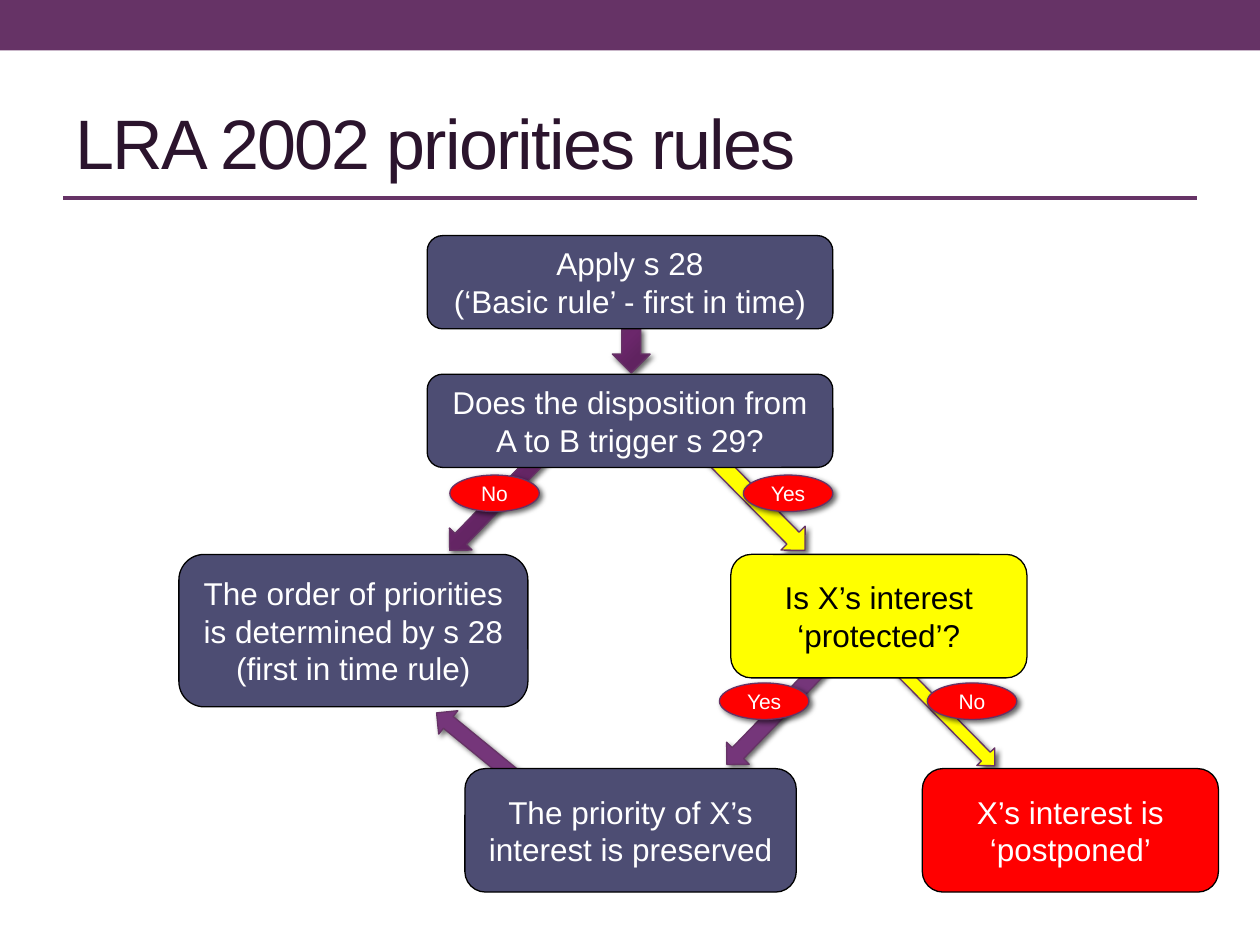
from lxml import etree
from pptx import Presentation
from pptx.dml.color import RGBColor
from pptx.enum import shapes, text
from pptx.oxml import ns
from pptx.util import Inches, Pt

COLORS = {
    "plum": "663366", "violet": "75367A", "deep": "622162", "slate": "4D4D73",
    "yellow": "FFFF00", "red": "FF0000", "black": "000000", "white": "FFFFFF",
    "title": "2B142D",
}
PLUM_STOPS = [(0, "622162"), (34, "602360"), (70, "6B276B"), (100, "663366")]
FONT = "Arial"
SHAPE = shapes.MSO_SHAPE


def rgb(name):
    return RGBColor.from_string(COLORS[name])


def sub(parent, tag, **attrs):
    return etree.SubElement(parent, ns.qn(tag), attrs)


def add_shape(s, kind, box, fill, line=None):
    sp = s.shapes.add_shape(kind, *map(Inches, box))
    sp.shadow.inherit = False
    sp.fill.solid()
    sp.fill.fore_color.rgb = rgb(fill)
    if line:
        sp.line.color.rgb = rgb(line)
        sp.line.width = Pt(0.75)
    else:
        sp.line.fill.background()
    return sp


def add_shadow(sp):
    effects = sp._element.spPr.find(ns.qn("a:effectLst"))
    shadow = sub(effects, "a:outerShdw", blurRad=str(Pt(3)), dist=str(Pt(2)),
                 dir="2700000", algn="tl", rotWithShape="0")
    color = sub(shadow, "a:srgbClr", val=COLORS["black"])
    sub(color, "a:alpha", val="60000")


def add_plum_gradient(sp):
    solid = sp._element.spPr.find(ns.qn("a:solidFill"))
    grad = etree.Element(ns.qn("a:gradFill"), rotWithShape="1")
    stops = sub(grad, "a:gsLst")
    for position, color in PLUM_STOPS:
        stop = sub(stops, "a:gs", pos=str(position * 1000))
        sub(stop, "a:srgbClr", val=color)
    circle = sub(grad, "a:path", path="circle")
    sub(circle, "a:fillToRect", l="100000", t="100000", r="0", b="0")
    solid.getparent().replace(solid, grad)


def set_text(sp, words, size, color):
    tf = sp.text_frame
    tf.text = words
    tf.word_wrap = True
    tf.vertical_anchor = text.MSO_ANCHOR.MIDDLE
    for p in tf.paragraphs:
        p.alignment = text.PP_ALIGN.CENTER
        for r in p.runs:
            r.font.name = FONT
            r.font.size = Pt(size)
            r.font.color.rgb = rgb(color)


def add_arrow(s, box, rotation, fill):
    sp = add_shape(s, SHAPE.DOWN_ARROW, box, fill, "plum")
    sp.rotation = rotation
    if fill == "deep":
        add_plum_gradient(sp)
    add_shadow(sp)


def add_step(s, box, words, fill="slate", color="white"):
    sp = add_shape(s, SHAPE.ROUNDED_RECTANGLE, box, fill, "black")
    set_text(sp, words, 18, color)


def add_answer(s, left, top, words):
    sp = add_shape(s, SHAPE.OVAL, (left, top, 0.71, 0.29), "red", "plum")
    # Small ovals need the whole width for their label
    tf = sp.text_frame
    tf.margin_left = tf.margin_right = tf.margin_top = tf.margin_bottom = 0
    set_text(sp, words, 12, "white")
    add_shadow(sp)


def add_header(s, box):
    left, top, width, height = box
    add_shape(s, SHAPE.RECTANGLE, (0, 0, 10, 0.4), "plum")

    title = s.shapes.title
    title.left, title.top, title.width, title.height = map(Inches, box)
    tf = title.text_frame
    tf.text = "LRA 2002 priorities rules"
    tf.vertical_anchor = text.MSO_ANCHOR.MIDDLE
    p = tf.paragraphs[0]
    p.alignment = text.PP_ALIGN.LEFT
    font = p.runs[0].font
    font.name, font.size = FONT, Pt(40)
    font.color.rgb = rgb("title")
    p.runs[0]._r.get_or_add_rPr().set("spc", "-100")

    # Rule under the title
    y = Inches(1.57)
    rule = s.shapes.add_connector(shapes.MSO_CONNECTOR.STRAIGHT, Inches(left), y,
                                  Inches(left + width), y)
    rule.line.color.rgb = rgb("plum")
    rule.line.width = Pt(2.08)
    sub(rule._element.spPr, "a:effectLst")


def add_flowchart(s):
    # Arrows go first so that the boxes cover their ends
    for box, rotation, fill in [
        ((3.72, 5.48, 0.24, 0.97), 129.3, "violet"),
        ((3.82, 3.44, 0.25, 1.08), 44.1, "deep"),
        ((6.02, 5.14, 0.25, 1.08), 44.1, "violet"),
        ((5.71, 3.04, 0.27, 1.55), 315.4, "yellow"),
        ((7.25, 4.75, 0.2, 1.55), 315.4, "yellow"),
        ((4.86, 2.61, 0.3, 0.35), 0, "deep"),
    ]:
        add_arrow(s, box, rotation, fill)

    # Steps, from the top row to the bottom row
    add_step(s, (3.39, 1.87, 3.22, 0.74),
             "Apply s 28\n(‘Basic rule’ - first in time)")
    add_step(s, (3.39, 2.97, 3.22, 0.74),
             "Does the disposition from A to B trigger s 29?")
    add_step(s, (1.42, 4.4, 2.77, 1.21),
             "The order of priorities is determined by s 28 (first in time rule)")
    add_step(s, (5.8, 4.4, 2.35, 0.98), "Is X’s interest ‘protected’?",
             "yellow", "black")
    add_step(s, (3.69, 6.1, 2.63, 0.98),
             "The priority of X’s interest is preserved")
    add_step(s, (7.32, 6.1, 2.35, 0.98), "X’s interest is ‘postponed’", "red")

    # Answers on the branches
    for left, top, words in [(3.57, 3.77, "No"), (5.9, 3.77, "Yes"),
                             (5.71, 5.42, "Yes"), (7.36, 5.42, "No")]:
        add_answer(s, left, top, words)


def main():
    prs = Presentation()
    prs.slide_width, prs.slide_height = Inches(10), Inches(7.5)
    s = prs.slides.add_slide(prs.slide_layouts[5])
    add_header(s, (0.5, 0.58, 9, 1.08))
    add_flowchart(s)
    prs.save("out.pptx")


if __name__ == "__main__":
    main()
